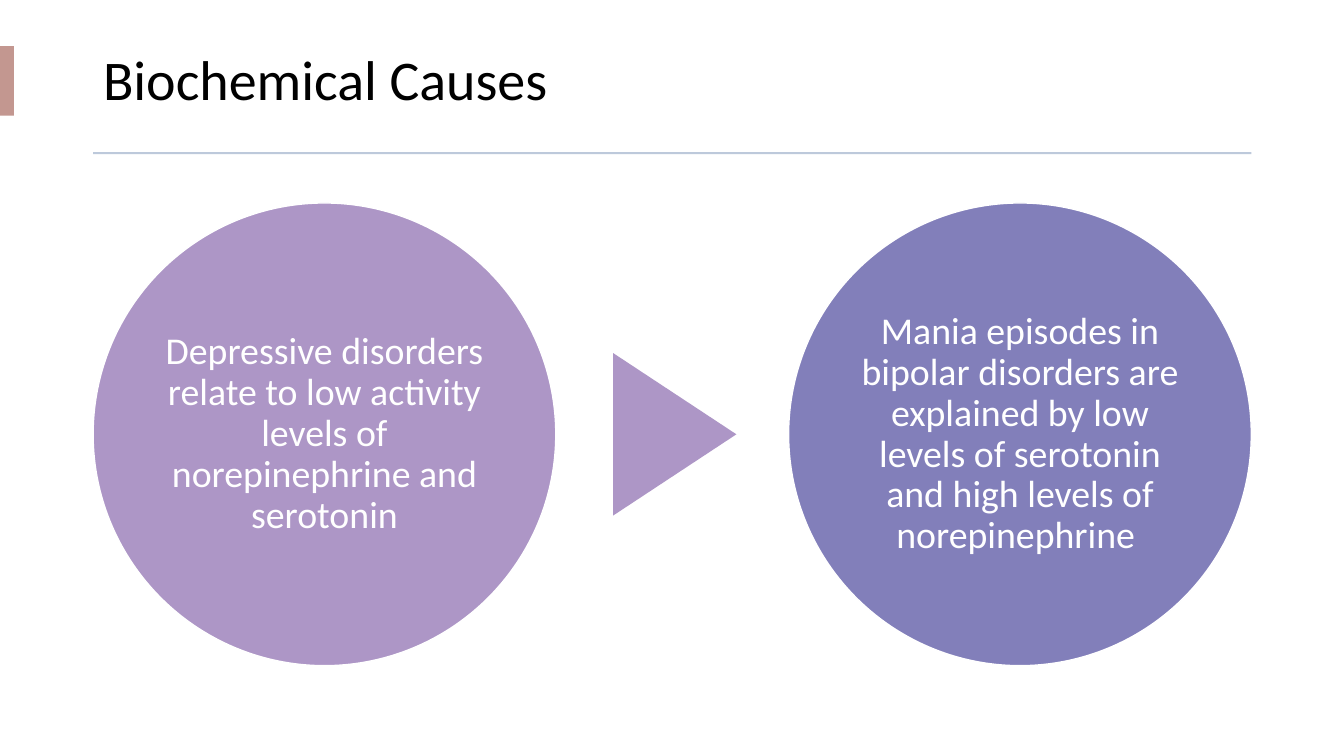
from pptx import Presentation
from pptx.dml.color import RGBColor
from pptx.enum.shapes import MSO_SHAPE
from pptx.enum.text import MSO_ANCHOR, PP_ALIGN
from pptx.util import Pt

RECTANGLE = MSO_SHAPE.RECTANGLE
OVAL = MSO_SHAPE.OVAL
TRIANGLE = MSO_SHAPE.ISOSCELES_TRIANGLE
MIDDLE = MSO_ANCHOR.MIDDLE
LEFT, CENTER = PP_ALIGN.LEFT, PP_ALIGN.CENTER

TITLE = "Biochemical Causes"
CAUSES = [
    ("Depressive disorders relate to low activity levels of "
     "norepinephrine and serotonin", "mauve"),
    ("Mania episodes in bipolar disorders are explained by low levels of "
     "serotonin and high levels of norepinephrine ", "violet"),
]
COLORS = {
    "black": "000000",
    "white": "FFFFFF",
    "accent": "C39790",
    "rule": "BDC9DB",
    "mauve": "AD96C6",
    "violet": "827FBA",
}
FONT = "Calibri"

SLIDE_WIDTH, SLIDE_HEIGHT = 960, 540
MARGIN, CONTENT_WIDTH = 66.5, 827.3
CIRCLE_TOP, CIRCLE_SIZE = 145, 330.5
ARROW_WIDTH, ARROW_HEIGHT, ARROW_CENTER = 116, 88, 482


def color(name):
    return RGBColor.from_string(COLORS[name])


def add_shape(slide, kind, left, top, width, height, fill, outline=None):
    shape = slide.shapes.add_shape(kind, Pt(left), Pt(top), Pt(width), Pt(height))
    shape.shadow.inherit = False
    shape.fill.solid()
    shape.fill.fore_color.rgb = color(fill)
    if outline:
        shape.line.color.rgb = color(outline)
        shape.line.width = Pt(1)
    else:
        shape.line.fill.background()
    return shape


def write_text(shape, text, size, fill, align, side_inset, edge_inset):
    frame = shape.text_frame
    frame.word_wrap = True
    frame.vertical_anchor = MIDDLE
    frame.margin_left = frame.margin_right = Pt(side_inset)
    frame.margin_top = frame.margin_bottom = Pt(edge_inset)
    paragraph = frame.paragraphs[0]
    paragraph.alignment = align
    paragraph.line_spacing = 0.9
    run = paragraph.add_run()
    run.text = text
    run.font.name = FONT
    run.font.size = Pt(size)
    run.font.color.rgb = color(fill)


def main():
    presentation = Presentation()
    presentation.slide_width = Pt(SLIDE_WIDTH)
    presentation.slide_height = Pt(SLIDE_HEIGHT)
    slide = presentation.slides.add_slide(presentation.slide_layouts[6])

    title = slide.shapes.add_textbox(Pt(MARGIN), Pt(19.5), Pt(CONTENT_WIDTH), Pt(79))
    write_text(title, TITLE, size=40, fill="black", align=LEFT,
               side_inset=7.2, edge_inset=3.6)
    add_shape(slide, RECTANGLE, 0, 33, 10, 49.7, fill="accent")
    add_shape(slide, RECTANGLE, MARGIN, 108.7, CONTENT_WIDTH, 1.4, fill="rule")

    step = (CONTENT_WIDTH - CIRCLE_SIZE) / (len(CAUSES) - 1)
    for index, (text, fill) in enumerate(CAUSES):
        circle = add_shape(slide, OVAL, MARGIN + index * step, CIRCLE_TOP,
                           CIRCLE_SIZE, CIRCLE_SIZE, fill=fill, outline="white")
        write_text(circle, text, size=27, fill="white", align=CENTER,
                   side_inset=2.7, edge_inset=2.7)

    circle_middle = CIRCLE_TOP + CIRCLE_SIZE / 2
    arrow = add_shape(slide, TRIANGLE, ARROW_CENTER - ARROW_WIDTH / 2,
                      circle_middle - ARROW_HEIGHT / 2,
                      ARROW_WIDTH, ARROW_HEIGHT, fill="mauve")
    arrow.rotation = 90

    presentation.save("out.pptx")


if __name__ == "__main__":
    main()
